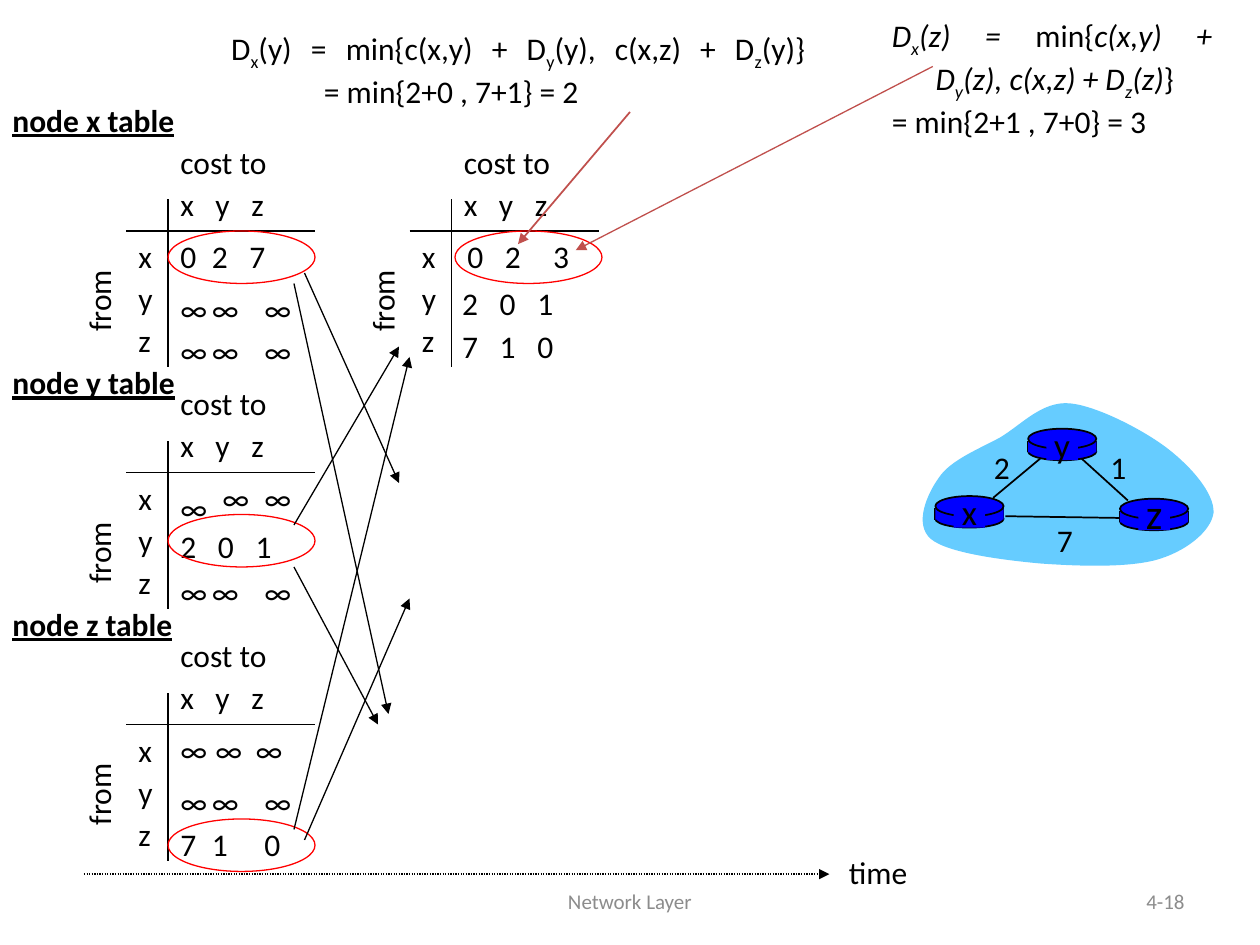
from dataclasses import dataclass
from typing import NamedTuple

from pptx import Presentation
from pptx.dml.color import RGBColor
from pptx.enum.dml import MSO_LINE_DASH_STYLE as Dash
from pptx.enum.shapes import MSO_CONNECTOR as Connector, MSO_SHAPE as Shape
from pptx.enum.text import MSO_ANCHOR as Anchor, PP_ALIGN as Align
from pptx.oxml.ns import qn
from pptx.oxml.xmlchemy import OxmlElement
from pptx.util import Pt

BLACK, GREY, RED, BRICK, BLUE, SKY = "000000", "8C8C8C", "FF0000", "C0504D", "0000FF", "66CCFF"
ROW_HEIGHT = 29
WIDE_TABS, HEADER_TABS, MIXED_TABS = (21.5, 43), (20, 40.5), (18, 39.5)


class Piece(NamedTuple):
    text: str
    italic: bool = False
    subscript: bool = False


class Entry(NamedTuple):
    lines: tuple
    dx: float
    dy: float
    tabs: tuple = ()


class Arrow(NamedTuple):
    start: tuple
    end: tuple
    color: str = BLACK
    width: float = 0.75
    dash: Dash | None = None


class Router(NamedTuple):
    name: str
    left: float
    top: float
    size: float
    label_dy: float


@dataclass
class CostTable:
    left: float
    top: float
    entries: list
    ring_dx: float
    ring_dy: float
    title: str = ""
    title_dy: float = 0
    from_dy: float = 40


def rgb(color: str) -> RGBColor:
    return RGBColor.from_string(color)


def add_text(shapes, box: tuple, lines, align=Align.LEFT, anchor=Anchor.TOP,
             tabs=(), indents=(), rotation=0, **style):
    shape = shapes.add_textbox(*map(Pt, box))
    shape.rotation = rotation
    frame = shape.text_frame
    frame.word_wrap = True
    frame.vertical_anchor = anchor
    color = rgb(style.pop("color", BLACK))
    font_values = {"name": "Calibri", "size": Pt(18)} | style
    for index, line in enumerate(lines):
        paragraph = frame.add_paragraph() if index else frame.paragraphs[0]
        paragraph.alignment = align
        properties = paragraph._p.get_or_add_pPr()
        if indents and indents[index]:
            properties.set("marL", str(Pt(indents[index])))
            properties.set("indent", str(-Pt(indents[index])))
        if tabs:
            tab_list = OxmlElement("a:tabLst")
            for position in tabs:
                tab = OxmlElement("a:tab")
                tab.set("pos", str(Pt(position)))
                tab.set("algn", "l")
                tab_list.append(tab)
            properties.append(tab_list)
        for piece in [Piece(line)] if isinstance(line, str) else line:
            if piece.text == "\n":
                paragraph.add_line_break()
                continue
            run = paragraph.add_run()
            run.text = piece.text
            for name, value in (font_values | {"italic": piece.italic}).items():
                setattr(run.font, name, value)
            run.font.color.rgb = color
            if piece.subscript:
                run.font._element.set("baseline", "-25000")


def add_line(shapes, start: tuple, end: tuple, color=BLACK, width=0.75, dash=None, arrow=False):
    connector = shapes.add_connector(Connector.STRAIGHT, *map(Pt, start + end))
    connector.line.color.rgb = rgb(color)
    connector.line.width = Pt(width)
    if dash:
        connector.line.dash_style = dash
    if arrow:
        tail = OxmlElement("a:tailEnd")
        tail.set("type", "triangle")
        connector.line._get_or_add_ln().append(tail)
    connector._element.spPr.append(OxmlElement("a:effectLst"))


def paint(shape, fill=None, line=None, width=0.75):
    shape.shadow.inherit = False
    if fill:
        shape.fill.solid()
        shape.fill.fore_color.rgb = rgb(fill)
    else:
        shape.fill.background()
    if line:
        shape.line.color.rgb = rgb(line)
        shape.line.width = Pt(width)
    else:
        shape.line.fill.background()


def add_shape(shapes, kind, box: tuple, fill=None, line=None, width=0.75):
    paint(shapes.add_shape(kind, *map(Pt, box)), fill, line, width)


def add_cloud(shapes, points: list):
    builder = shapes.build_freeform(*map(Pt, points[0]), scale=1.0)
    builder.add_line_segments([(Pt(x), Pt(y)) for x, y in points[1:]], close=True)
    cloud = builder.convert_to_shape()
    paint(cloud, SKY)
    segments = list(cloud._element.iter(qn("a:lnTo")))
    for first, second, third in zip(*[iter(segments)] * 3):
        curve = OxmlElement("a:cubicBezTo")
        first.addprevious(curve)
        for segment in (first, second, third):
            curve.append(segment[0])
            segment.getparent().remove(segment)


def add_router(shapes, router: Router):
    left, top = router.left, router.top
    add_shape(shapes, Shape.OVAL, (left, top + 8, 39, 10), BLUE, BLACK, 1)
    for x in (left, left + 39):
        add_line(shapes, (x, top + 7), (x, top + 13.5), width=1)
    add_shape(shapes, Shape.RECTANGLE, (left, top + 7, 39, 6.5), BLUE)
    add_shape(shapes, Shape.OVAL, (left, top, 39, 11.5), BLUE, BLACK, 1)
    add_shape(shapes, Shape.RECTANGLE, (left + 10.5, top + 1.5, 18, 16.5), BLUE)
    add_text(shapes, (left + 4.5, top + router.label_dy, 30, 31), [router.name],
             Align.CENTER, size=Pt(router.size))


def add_cost_table(shapes, table: CostTable):
    left, top = table.left, table.top
    add_line(shapes, (left, top - 18), (left, top + 78))
    add_line(shapes, (left - 24, top), (left + 84, top))
    add_text(shapes, (left, top - 54, 80, ROW_HEIGHT), ["cost to"])
    add_text(shapes, (left, top - 30, 76, ROW_HEIGHT), ["x\ty\tz"], tabs=HEADER_TABS)
    for row, node in enumerate("xyz"):
        add_text(shapes, (left - 24, top + 24 * row, 26, ROW_HEIGHT), [node])
    add_text(shapes, (left - 69.5, top + table.from_dy - ROW_HEIGHT / 2, 60, ROW_HEIGHT),
             ["from"], Align.CENTER, rotation=270)
    for entry in table.entries:
        width = 78 if entry.tabs else 30
        add_text(shapes, (left + entry.dx, top + entry.dy, width, ROW_HEIGHT * len(entry.lines)),
                 entry.lines, tabs=entry.tabs)
    add_shape(shapes, Shape.OVAL, (left + table.ring_dx, top + table.ring_dy, 84, 30), line=RED)
    if table.title:
        add_text(shapes, (0, top + table.title_dy, 135, ROW_HEIGHT), [table.title],
                 bold=True, underline=True)


def spread(values: str, dy: float, offsets=(0, 18, 48)) -> list:
    return [Entry((value,), dx, dy) for value, dx in zip(values, offsets)]


TABLES = [
    CostTable(96, 132, [Entry(("0\t2\t7",), 0, 0, MIXED_TABS)] + spread("∞∞∞", 30)
              + spread("∞∞∞", 54), 0, 0, "node x table", -78),
    CostTable(258, 132, spread("023", 0, (2, 23.5, 51)) + [
        Entry(("2\t0\t1",), -1, 27, WIDE_TABS), Entry(("7\t1\t0",), -1, 51.5, WIDE_TABS)], 2, 0),
    CostTable(96, 270, spread("∞∞", 0, (24, 48)) + spread("∞∞∞", 54)
              + [Entry(("∞", "2\t0\t1"), 0, 6, WIDE_TABS)], 0, 24, "node y table", -66, 46),
    CostTable(96, 414, [Entry(("∞\t∞\t∞",), 0, 0, (20, 43))] + spread("∞∞∞", 30)
              + spread("710", 54), 0, 54, "node z table", -72),
]
ARROWS = [
    Arrow((174, 156), (228, 276)), Arrow((168, 162), (222, 408)),
    Arrow((168, 300), (228, 198)), Arrow((168, 324), (216, 414)),
    Arrow((168, 474), (234, 204)), Arrow((174, 480), (234, 342)),
    Arrow((48, 499.5), (474, 499.5), dash=Dash.ROUND_DOT),
    Arrow((360, 64), (296, 139.5), BRICK, 1), Arrow((533, 38), (329, 143), BRICK),
]
CLOUD = [(536.5, 273), (543, 263), (559.5, 256.5), (571.5, 250), (584, 242.5), (595.5, 229),
         (611.5, 230.5), (627, 232), (654, 246), (667.5, 256.5), (681, 267), (694, 282),
         (693.5, 293), (692, 304), (677, 315.5), (660.5, 320), (643.5, 324.5), (615.5, 323.5),
         (594.5, 322), (573, 320), (541.5, 316), (532, 308), (522, 299.5), (530, 282), (536.5, 273)]
LINKS = [((567.5, 284.5), (594.5, 262)), ((618, 262), (644.5, 286)), ((641.5, 296), (574.5, 295))]
ROUTERS = [Router("x", 534.5, 283.5, 20, -6.5), Router("z", 640, 285, 24, -10),
           Router("y", 587.5, 245, 20, -6.5)]
LINK_COSTS = [("1", 639, 252.5), ("2", 572.5, 252.5), ("7", 608.5, 294)]
Y_FORMULA = [[
    Piece("D"), Piece("x", subscript=True), Piece("(y) = min{c(x,y) + D"),
    Piece("y", subscript=True), Piece("(y), c(x,z) + D"), Piece("z", subscript=True),
    Piece("(y)} "), Piece("\n"), Piece("= min{2+0 , 7+1} = 2")]]
Z_FORMULA = [[
    Piece("D", True), Piece("x", True, True), Piece("(z) = ", True), Piece("min{"),
    Piece("c(x,y) + ", True), Piece("\n"), Piece("D", True), Piece("y", True, True),
    Piece("(z), c(x,z) + D", True), Piece("z", True, True), Piece("(z)", True), Piece("}")],
    "= min{2+1 , 7+0} = 3"]


def main():
    presentation = Presentation()
    presentation.slide_width, presentation.slide_height = Pt(720), Pt(540)
    shapes = presentation.slides.add_slide(presentation.slide_layouts[6]).shapes
    footer = {"anchor": Anchor.MIDDLE, "size": Pt(12), "color": GREY}
    add_text(shapes, (246, 500.5, 228, 29), ["Network Layer"], Align.CENTER, **footer)
    add_text(shapes, (516, 500.5, 168, 29), ["4-18"], Align.RIGHT, **footer)
    for table in TABLES:
        add_cost_table(shapes, table)
    for arrow in ARROWS:
        add_line(shapes, *arrow, arrow=True)
    add_text(shapes, (478, 484, 60, ROW_HEIGHT), ["time"])

    network = shapes.add_group_shape().shapes
    add_cloud(network, CLOUD)
    for start, end in LINKS:
        add_line(network, start, end, width=1)
    for router in ROUTERS:
        add_router(network, router)
    for cost, center, top in LINK_COSTS:
        add_text(network, (center - 13, top, 26, ROW_HEIGHT), [cost], Align.CENTER)

    formula = {"align": Align.JUSTIFY, "anchor": Anchor.MIDDLE}
    add_text(shapes, (125, 14.5, 353, 50.5), Y_FORMULA, indents=(53,), **formula)
    add_text(shapes, (502.5, 8.5, 217, 72), Z_FORMULA, indents=(25, 0), **formula)
    presentation.save("out.pptx")


if __name__ == "__main__":
    main()
